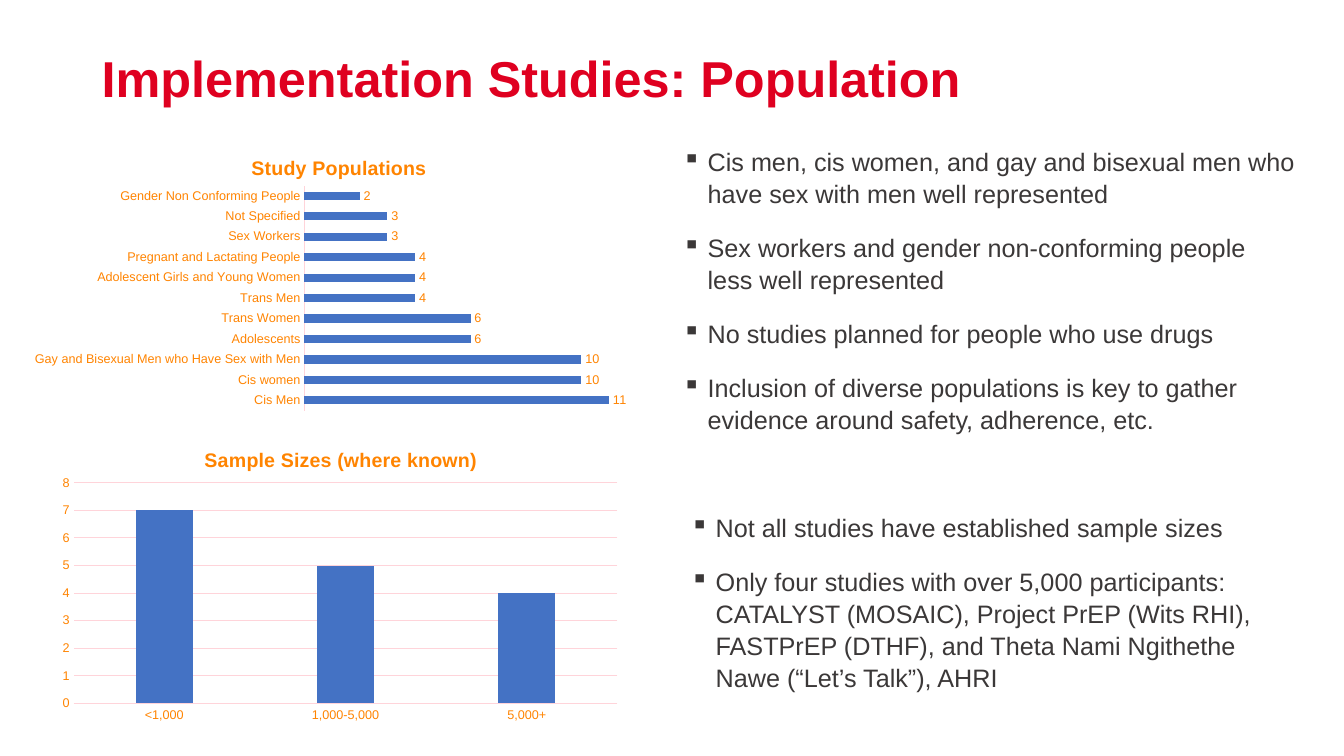
import pptx
import pptx.chart.data
import pptx.dml.color
import pptx.enum.chart
import pptx.enum.text
import pptx.oxml
import pptx.oxml.ns
import pptx.util

Inches = pptx.util.Inches
Pt = pptx.util.Pt
RGBColor = pptx.dml.color.RGBColor
Kind = pptx.enum.chart.XL_CHART_TYPE
qn = pptx.oxml.ns.qn

RED = RGBColor(0xDF, 0x00, 0x20)
ORANGE = RGBColor(0xFF, 0x84, 0x00)
GREY = RGBColor(0x3B, 0x38, 0x38)
BLUE = RGBColor(0x44, 0x72, 0xC4)
PINK = RGBColor(0xFF, 0xD4, 0xDA)

GROUPS = [
    ("Cis Men", 11),
    ("Cis women", 10),
    ("Gay and Bisexual Men who Have Sex with Men", 10),
    ("Adolescents", 6),
    ("Trans Women", 6),
    ("Trans Men", 4),
    ("Adolescent Girls and Young Women", 4),
    ("Pregnant and Lactating People", 4),
    ("Sex Workers", 3),
    ("Not Specified", 3),
    ("Gender Non Conforming People", 2),
]
SIZES = [("<1,000", 7), ("1,000-5,000", 5), ("5,000+", 4)]
REACH = [
    "Cis men, cis women, and gay and bisexual men who have sex with men well represented",
    "Sex workers and gender non-conforming people less well represented",
    "No studies planned for people who use drugs",
    "Inclusion of diverse populations is key to gather evidence around safety, adherence, etc.",
]
SCALE = [
    "Not all studies have established sample sizes",
    "Only four studies with over 5,000 participants: CATALYST (MOSAIC), Project PrEP (Wits RHI), "
    "FASTPrEP (DTHF), and Theta Nami Ngithethe Nawe (“Let’s Talk”), AHRI",
]


def style(font, size, color, bold=False):
    font.name = "Arial"
    font.size = Pt(size)
    font.bold = bold
    font.color.rgb = color


def write(para, text, size=18, color=GREY, bold=False, space=None):
    run = para.add_run()
    run.text = text
    style(run.font, size, color, bold)
    if space:
        para.line_spacing = space


def add_box(slide, area):
    frame = slide.shapes.add_textbox(*map(Inches, area)).text_frame
    frame.word_wrap = True
    return frame


def add_title(slide, text):
    frame = add_box(slide, (0.91, 0.4, 11.9, 0.82))
    frame.vertical_anchor = pptx.enum.text.MSO_ANCHOR.MIDDLE
    write(frame.paragraphs[0], text, size=36, color=RED, bold=True, space=0.9)


def add_bullets(slide, area, lines):
    frame = add_box(slide, area)
    for i, line in enumerate(lines):
        para = frame.add_paragraph() if i else frame.paragraphs[0]
        props = para._p.get_or_add_pPr()
        props.set("marL", str(Inches(0.25)))
        props.set("indent", str(-Inches(0.25)))
        mark = pptx.oxml.parse_xml(
            f'<a:buChar {pptx.oxml.ns.nsdecls("a")} char="▪"/>')
        props.append(mark)
        para.space_before = Pt(10 if i else 0)
        para.space_after = Pt(6)
        write(para, line, space=1.05)


def place(node, index, **spots):
    old = node.find(qn("c:layout"))
    if old is not None:
        node.remove(old)
    modes = "".join(f'<c:{key}Mode val="edge"/>' for key in "xy")
    values = "".join(f'<c:{key} val="{val}"/>' for key, val in spots.items())
    inner = '<c:layoutTarget val="inner"/>' if "w" in spots else ""
    node.insert(index, pptx.oxml.parse_xml(
        f'<c:layout {pptx.oxml.ns.nsdecls("c")}><c:manualLayout>'
        f'{inner}{modes}{values}</c:manualLayout></c:layout>'))


def set_line(line):
    line.color.rgb = PINK
    line.width = Pt(0.75)


def add_bars(slide, kind, area, title, rows, top, gap, lap, head, body):
    data = pptx.chart.data.CategoryChartData()
    names, values = zip(*rows)
    data.categories = names
    data.add_series("Series 1", values)
    chart = slide.shapes.add_chart(kind, *map(Inches, area), data).chart
    style(chart.font, 10, ORANGE)
    chart.has_legend = False
    write(chart.chart_title.text_frame.paragraphs[0], title,
          size=14, color=ORANGE, bold=True)
    chart.chart_title.include_in_layout = False
    place(chart.chart_title._element, 1, **head)
    place(chart._chartSpace.find(".//" + qn("c:plotArea")), 0, **body)

    plot = chart.plots[0]
    plot.gap_width = gap
    plot.overlap = lap
    plot.vary_by_categories = False
    fill = plot.series[0].format.fill
    fill.solid()
    fill.fore_color.rgb = BLUE
    for axis in (chart.category_axis, chart.value_axis):
        axis.major_tick_mark = pptx.enum.chart.XL_TICK_MARK.NONE
        style(axis.tick_labels.font, 9, ORANGE)
    set_line(chart.category_axis.format.line)
    scale = chart.value_axis
    scale.minimum_scale = 0
    scale.maximum_scale = top
    scale.format.line.fill.background()
    return chart


def add_groups(slide):
    chart = add_bars(
        slide, Kind.BAR_CLUSTERED, (0.22, 1.34, 6.22, 2.79),
        "Study Populations", GROUPS, top=12, gap=150, lap=-25,
        head=dict(x=0.36, y=0.06), body=dict(x=0.45, y=0.18, w=0.53, h=0.8))
    chart.value_axis.has_major_gridlines = False
    chart.value_axis.visible = False
    plot = chart.plots[0]
    plot.has_data_labels = True
    labels = plot.data_labels
    labels.show_value = True
    labels.position = pptx.enum.chart.XL_LABEL_POSITION.OUTSIDE_END
    style(labels.font, 9, ORANGE)


def add_sizes(slide):
    chart = add_bars(
        slide, Kind.COLUMN_CLUSTERED, (0.5, 4.22, 5.74, 3),
        "Sample Sizes (where known)", SIZES, top=8, gap=219, lap=-27,
        head=dict(x=0.26, y=0.06), body=dict(x=0.04, y=0.19, w=0.94, h=0.73))
    chart.value_axis.major_unit = 1
    set_line(chart.value_axis.major_gridlines.format.line)


def main():
    deck = pptx.Presentation()
    deck.slide_width = Inches(13.33)
    deck.slide_height = Inches(7.5)
    slide = deck.slides.add_slide(deck.slide_layouts[6])
    add_title(slide, "Implementation Studies: Population")
    add_bullets(slide, (6.67, 1.39, 6.29, 2.91), REACH)
    add_groups(slide)
    add_sizes(slide)
    add_bullets(slide, (6.75, 5.02, 6.29, 1.89), SCALE)
    deck.save("out.pptx")


if __name__ == "__main__":
    main()
